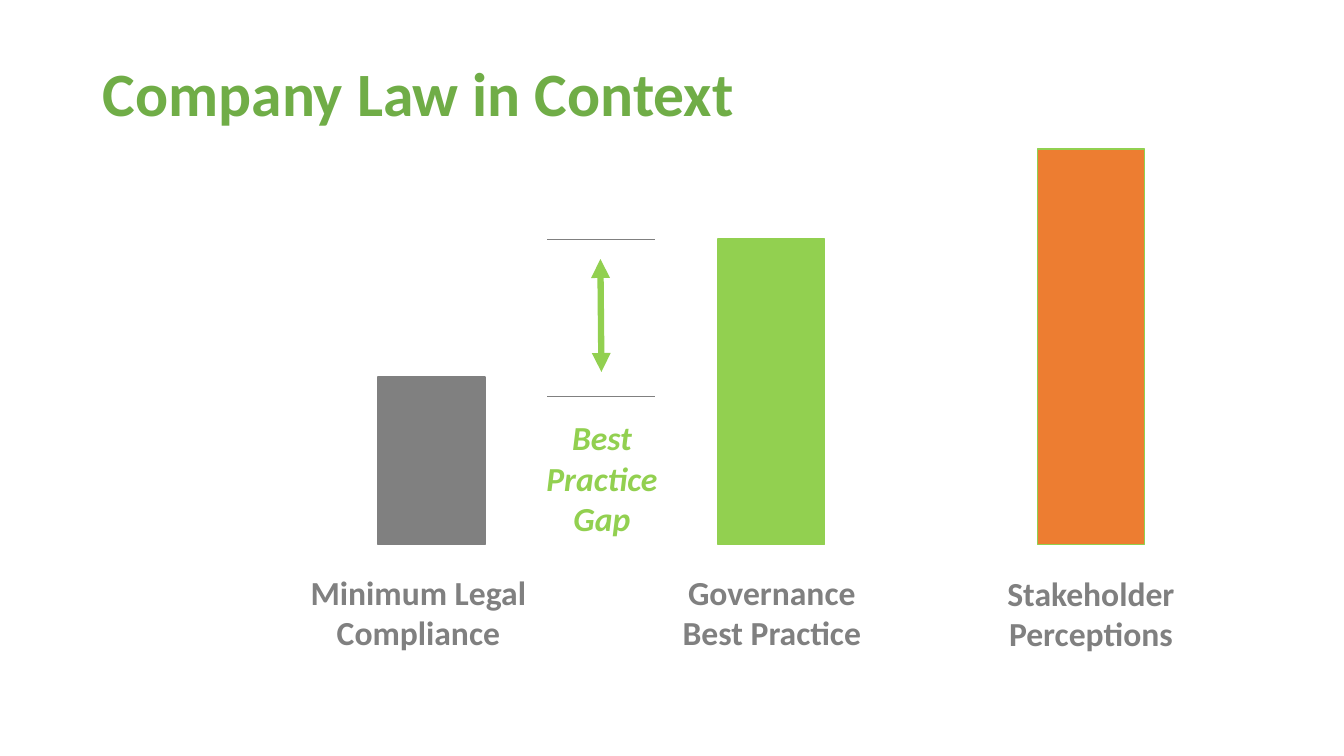
from dataclasses import dataclass

from lxml import etree
from pptx import Presentation, util as u
from pptx.dml.color import RGBColor
from pptx.enum import shapes, text
from pptx.oxml.ns import qn


@dataclass(frozen=True)
class Theme:
    """Colours, font and type sizes of the slide."""
    heading: str = "70AD47"
    grey: str = "808080"
    green: str = "92D050"
    orange: str = "ED7D31"
    font: str = "Calibri"
    heading_size: int = 44
    label_size: int = 24


THEME = Theme()
BAR_WIDTH = 1.06
BASELINE = 5.4
LABEL_HEIGHT = 0.91


def write(frame, lines, size=THEME.label_size, color=THEME.grey, italic=False,
          align=text.PP_ALIGN.CENTER, anchor=text.MSO_ANCHOR.TOP, spacing=None):
    """Fill a text frame with bold lines, one paragraph each."""
    frame.word_wrap = True
    frame.auto_size = text.MSO_AUTO_SIZE.NONE
    frame.vertical_anchor = anchor
    for index, line in enumerate(lines):
        paragraph = frame.paragraphs[0] if index == 0 else frame.add_paragraph()
        paragraph.alignment = align
        paragraph.line_spacing = spacing
        run = paragraph.add_run()
        run.text = line
        run.font.name = THEME.font
        run.font.size = u.Pt(size)
        run.font.bold = True
        run.font.italic = italic
        run.font.color.rgb = RGBColor.from_string(color)


def add_label(slide, box, lines, **style):
    """Place a text box with centred lines."""
    label = slide.shapes.add_textbox(*map(u.Inches, box))
    write(label.text_frame, lines, **style)


def add_rule(slide, start, end, color, width, arrows=False):
    """Draw a straight line, with a triangle at both ends on request."""
    rule = slide.shapes.add_connector(
        shapes.MSO_CONNECTOR.STRAIGHT, *map(u.Inches, (*start, *end)))
    rule.line.color.rgb = RGBColor.from_string(color)
    rule.line.width = u.Pt(width)
    if arrows:
        stroke = rule.line._get_or_add_ln()
        for tag in ("a:headEnd", "a:tailEnd"):
            etree.SubElement(stroke, qn(tag), type="triangle")
    etree.SubElement(rule._element.spPr, qn("a:effectLst"))


def add_heading(slide, box, wording):
    """Move the title placeholder into its box and fill it."""
    heading = slide.shapes.title
    heading.left, heading.top, heading.width, heading.height = map(u.Inches, box)
    write(heading.text_frame, [wording], size=THEME.heading_size,
          color=THEME.heading, align=text.PP_ALIGN.LEFT,
          anchor=text.MSO_ANCHOR.MIDDLE, spacing=0.9)


def add_bar(slide, box, fill, outline):
    """Draw one standard as a bar."""
    bar = slide.shapes.add_shape(shapes.MSO_SHAPE.RECTANGLE, *map(u.Inches, box))
    bar.shadow.inherit = False
    bar.fill.solid()
    bar.fill.fore_color.rgb = RGBColor.from_string(fill)
    bar.line.color.rgb = RGBColor.from_string(outline)
    bar.line.width = u.Pt(1)


def add_gap(slide, box):
    """Mark the gap with two rules, a double arrow and a caption below."""
    left, top, width, height = box
    for y in (top, top + height):
        add_rule(slide, (left, y), (left + width, y), THEME.grey, 0.5)
    center = left + width / 2
    add_rule(slide, (center - 0.01, top + 0.2), (center, top + height - 0.24),
             THEME.green, 4.5, arrows=True)
    add_label(slide, (center - 0.78, top + height + 0.16, 1.57, 1.31),
              ["Best Practice", "Gap"], color=THEME.green, italic=True)


def main():
    """Build and save the slide."""
    deck = Presentation()
    deck.slide_width, deck.slide_height = u.Inches(13.33), u.Inches(7.5)
    slide = deck.slides.add_slide(deck.slide_layouts[5])
    add_heading(slide, (0.92, 0.23, 11.5, 1.45), "Company Law in Context")
    standards = [
        (3.75, 1.66, THEME.grey, THEME.grey,
         (2.96, 5.62, 2.38), ["Minimum Legal", "Compliance"]),
        (7.12, 3.03, THEME.green, THEME.green,
         (6.62, 5.62, 2.07), ["Governance", "Best Practice"]),
        (10.29, 3.92, THEME.orange, THEME.green,
         (9.84, 5.63, 1.96), ["Stakeholder", "Perceptions"]),
    ]
    for left, height, fill, outline, label_box, lines in standards:
        add_bar(slide, (left, BASELINE - height, BAR_WIDTH, height), fill, outline)
        add_label(slide, (*label_box, LABEL_HEIGHT), lines)
    add_gap(slide, (5.43, 2.37, 1.07, 1.56))
    deck.save("out.pptx")


if __name__ == "__main__":
    main()
